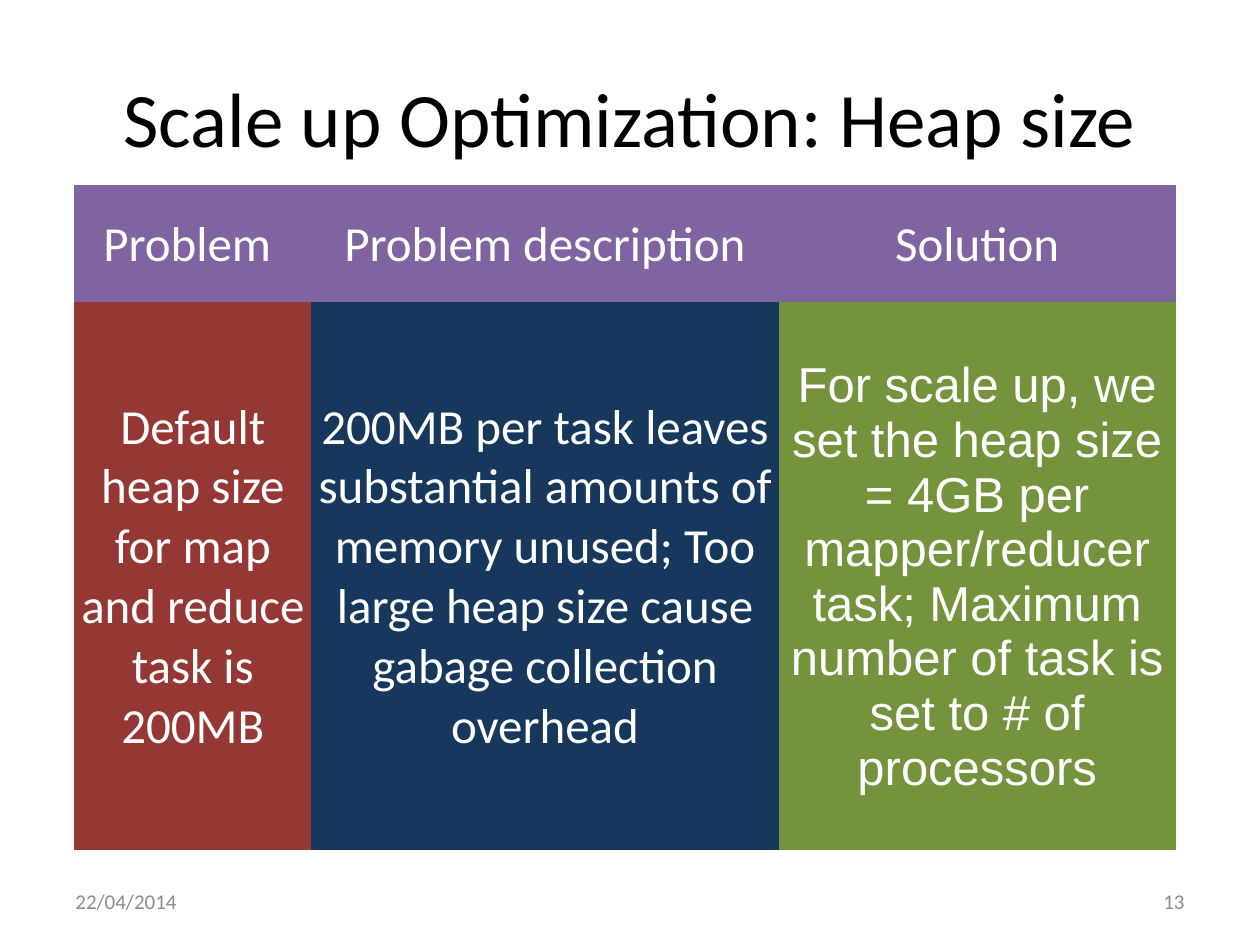
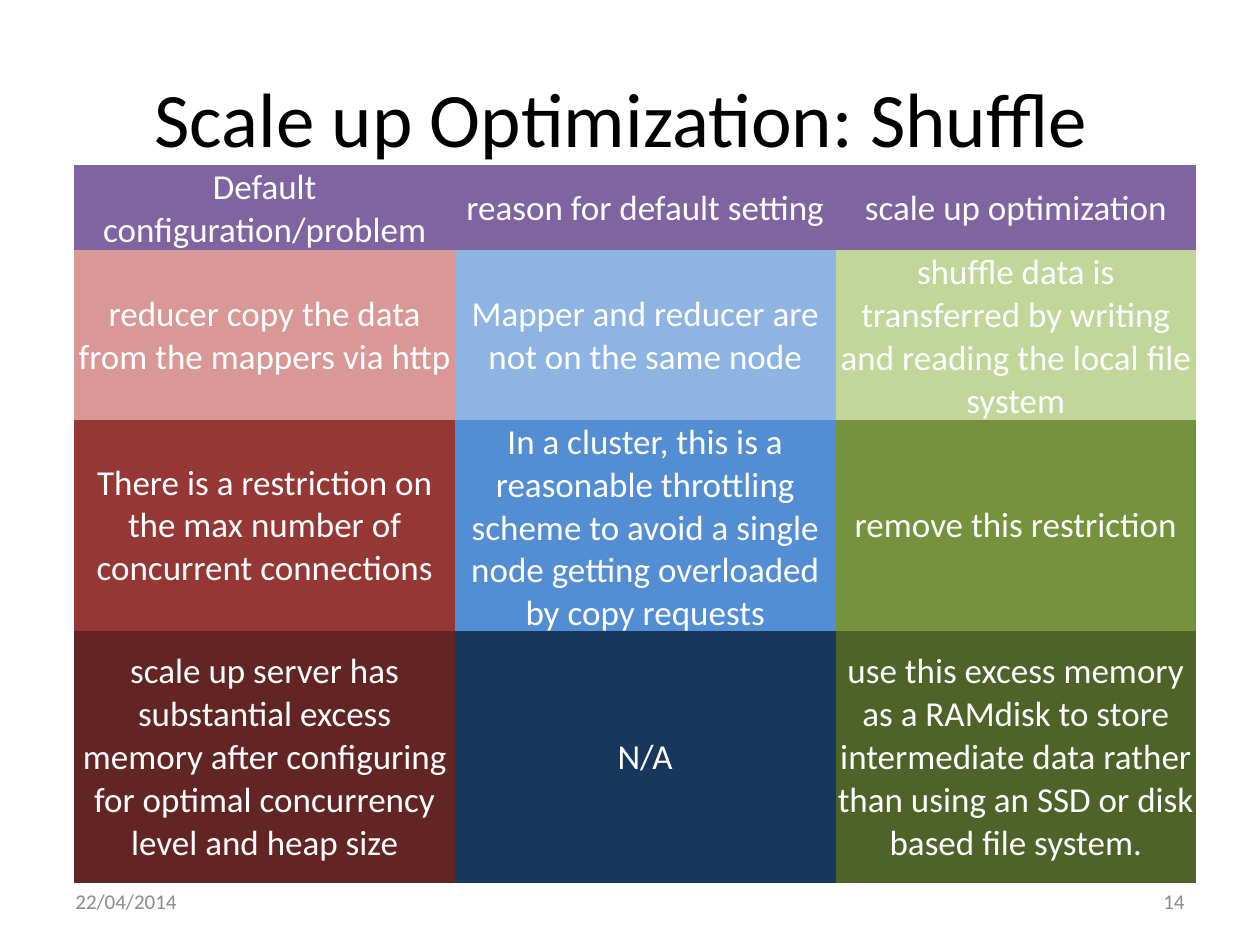
from pptx import Presentation
from pptx.dml.color import RGBColor
from pptx.enum.text import MSO_ANCHOR as Anchor, PP_ALIGN as Align
from pptx.util import Pt

BODY_FONT = "Calibri"
WHITE, BLACK, GREY = "FFFFFF", "000000", "8C8C8C"
PURPLE = "8064A2"
RED, NAVY, GREEN = "953735", "17375D", "75923C"
LIGHT_RED, LIGHT_BLUE, LIGHT_GREEN = "D99795", "8DB4E3", "C2D69A"
BLUE, DARK_RED, DARK_GREEN = "538ED5", "632523", "4F6228"
NO_GRID_STYLE = "{2D5ABB26-0587-4C30-8999-92F81FD0307C}"

MARGIN = 36
TITLE_WIDTH = 648
FOOTER_WIDTH = 168
TABLE_LEFT = 42.5
CELL_FORMAT = {
    "vertical_anchor": Anchor.MIDDLE,
    "margin_left": Pt(0.72),
    "margin_right": Pt(0.72),
    "margin_top": Pt(0.72),
    "margin_bottom": Pt(0),
}
PLAIN_TABLE = {"first_row": False, "horz_banding": False}

HEAP_ROWS = [
    [("Problem ", PURPLE), ("Problem description", PURPLE), ("Solution", PURPLE)],
    [
        ("Default heap size for map and reduce task is 200MB", RED),
        ("200MB per task leaves substantial amounts of memory unused; "
         "Too large heap size cause gabage collection overhead", NAVY),
        ("For scale up, we set the heap size = 4GB per mapper/reducer task; "
         "Maximum number of task is set to # of processors", GREEN, "Arial"),
    ],
]
SHUFFLE_ROWS = [
    [
        ("Default configuration/problem", PURPLE),
        ("reason for default setting", PURPLE),
        ("scale up optimization", PURPLE),
    ],
    [
        ("reducer copy the data from the mappers via http", LIGHT_RED),
        ("Mapper and reducer are not on the same node", LIGHT_BLUE),
        ("shufﬂe data is transferred by writing and reading the local "
         "ﬁle system", LIGHT_GREEN),
    ],
    [
        ("There is a restriction on the max number of concurrent connections", RED),
        ("In a cluster, this is a reasonable throttling scheme to avoid a "
         "single node getting overloaded by copy requests", BLUE),
        ("remove this restriction", GREEN),
    ],
    [
        ("scale up server has substantial excess memory after conﬁguring for "
         "optimal concurrency level and heap size", DARK_RED),
        ("N/A", NAVY),
        ("use this excess memory as a RAMdisk to store intermediate data rather "
         "than using an SSD or disk based ﬁle system.", DARK_GREEN),
    ],
]


def color(code):
    return RGBColor.from_string(code)


def apply_format(target, values):
    for name, value in values.items():
        setattr(target, name, value)


def write_text(frame, text, size, code, align, font=BODY_FONT):
    para = frame.paragraphs[0]
    para.alignment = align
    span = para.add_run()
    span.text = text
    apply_format(span.font, {"size": Pt(size), "name": font})
    span.font.color.rgb = color(code)


def add_text(page, bounds, text, size, code, align):
    box = page.shapes.add_textbox(*map(Pt, bounds))
    frame = box.text_frame
    apply_format(frame, {"word_wrap": True, "vertical_anchor": Anchor.MIDDLE})
    write_text(frame, text, size, code, align)


def add_title(page, text):
    add_text(page, (MARGIN, 21.6, TITLE_WIDTH, 90), text, 44, BLACK, Align.CENTER)


def add_footer(page, number):
    right_box = MARGIN + TITLE_WIDTH - FOOTER_WIDTH
    for left, text, align in (
        (MARGIN, "22/04/2014", Align.LEFT),
        (right_box, str(number), Align.RIGHT),
    ):
        add_text(page, (left, 500.4, FOOTER_WIDTH, 28.8), text, 12, GREY, align)


def add_color_table(page, top, widths, heights, rows, size):
    bounds = (TABLE_LEFT, top, sum(widths), sum(heights))
    frame = page.shapes.add_table(len(rows), len(widths), *map(Pt, bounds))
    table = frame.table
    apply_format(table, PLAIN_TABLE)
    table._tbl.tblPr.find("{*}tableStyleId").text = NO_GRID_STYLE
    for column, width in zip(table.columns, widths):
        column.width = Pt(width)
    for row, height, entries in zip(table.rows, heights, rows):
        row.height = Pt(height)
        for cell, (text, fill, *font) in zip(row.cells, entries):
            apply_format(cell, CELL_FORMAT)
            cell.fill.solid()
            cell.fill.fore_color.rgb = color(fill)
            write_text(cell.text_frame, text, size, WHITE, Align.CENTER, *font)


def add_page(deck, title, number, **table):
    page = deck.slides.add_slide(deck.slide_layouts[6])
    add_title(page, title)
    add_footer(page, number)
    add_color_table(page, **table)


def main():
    deck = Presentation()
    apply_format(deck, {"slide_width": Pt(720), "slide_height": Pt(540)})
    add_page(
        deck, "Scale up Optimization: Heap size", 13,
        top=105.8, widths=(135.4, 267.1, 226.8), heights=(67, 313.2),
        rows=HEAP_ROWS, size=28,
    )
    add_page(
        deck, "Scale up Optimization: Shuffle ", 14,
        top=94.3, widths=(217.5, 217.5, 206), heights=(47.5, 94.3, 117.4, 144),
        rows=SHUFFLE_ROWS, size=20,
    )
    deck.save("out.pptx")


if __name__ == "__main__":
    main()
